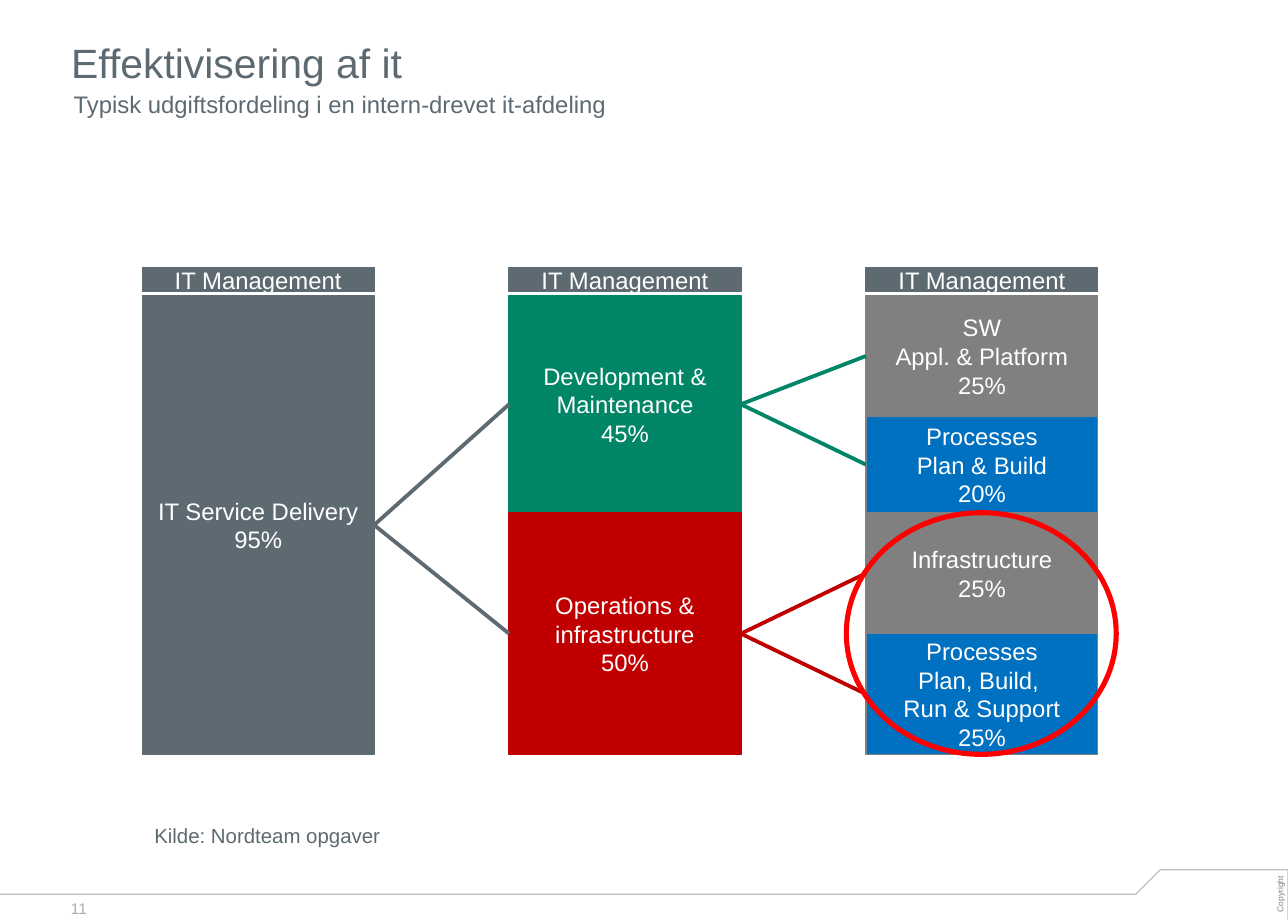
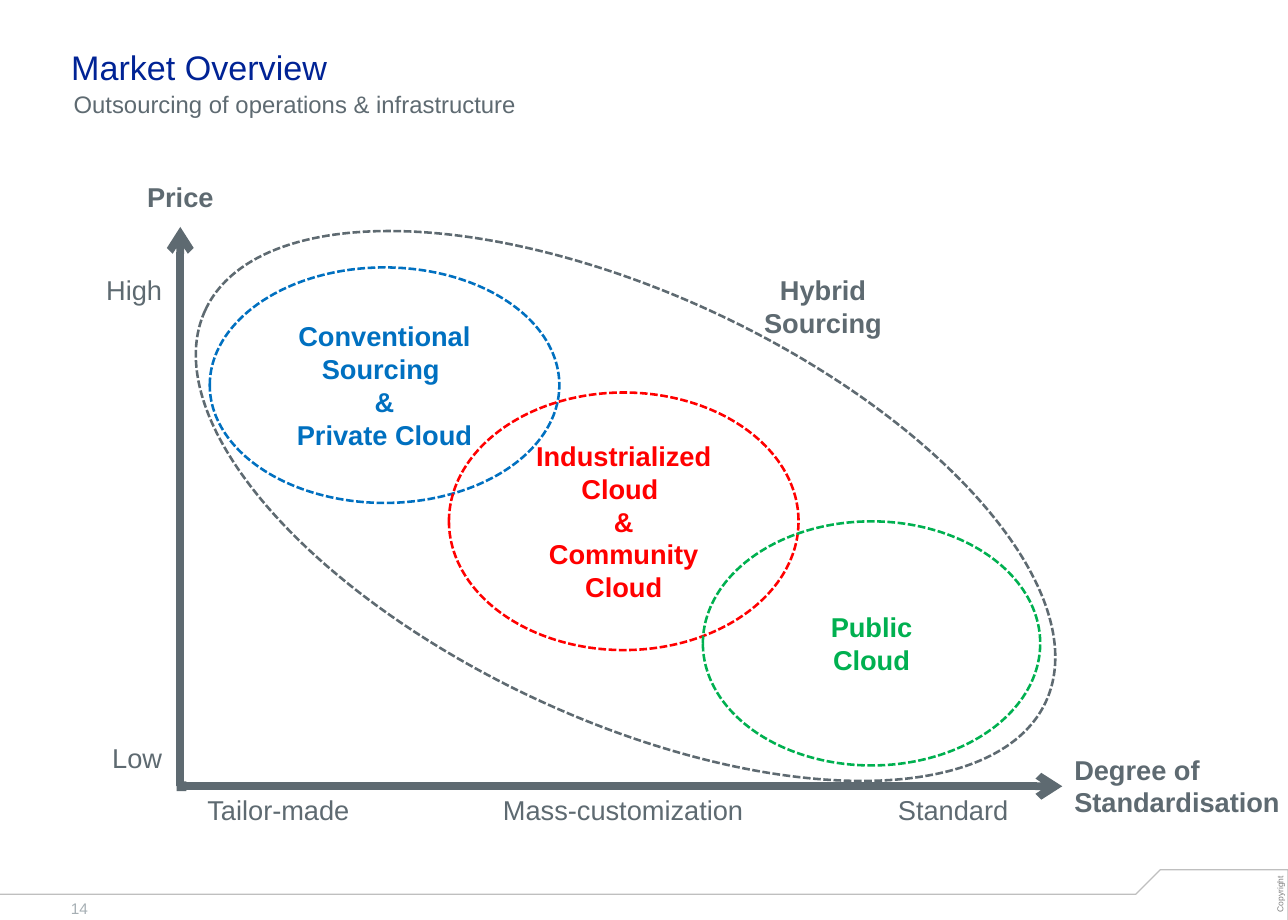
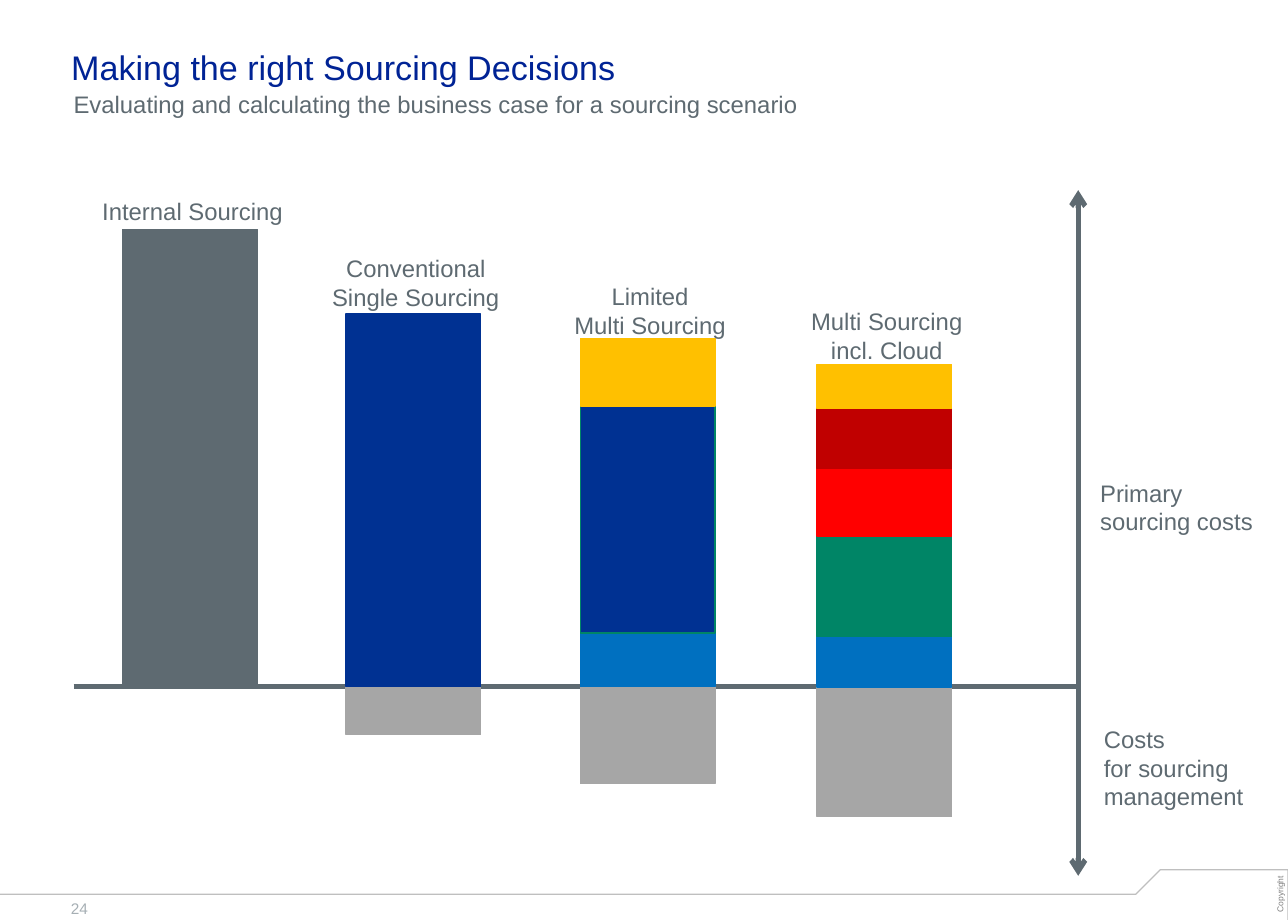
from lxml import etree
from pptx import Presentation
from pptx.dml.color import RGBColor
from pptx.enum.dml import MSO_LINE
from pptx.enum.shapes import MSO_CONNECTOR, MSO_SHAPE
from pptx.enum.text import MSO_ANCHOR, MSO_AUTO_SIZE, PP_ALIGN
from pptx.oxml.ns import qn
from pptx.util import Inches, Pt

RECT, OVAL = MSO_SHAPE.RECTANGLE, MSO_SHAPE.OVAL
STRAIGHT, DASH = MSO_CONNECTOR.STRAIGHT, MSO_LINE.SQUARE_DOT
LEFT, CENTER, RIGHT = PP_ALIGN.LEFT, PP_ALIGN.CENTER, PP_ALIGN.RIGHT
TOP, MIDDLE, BOTTOM = MSO_ANCHOR.TOP, MSO_ANCHOR.MIDDLE, MSO_ANCHOR.BOTTOM
NO_FIT = MSO_AUTO_SIZE.NONE
SITE_LEFT, SITE_RIGHT = 1, 3

FONT = "Arial"
COLORS = {
    "white": "FFFFFF", "slate": "5E6A71", "navy": "002395", "blue": "0070C0",
    "deep": "003192", "teal": "008566", "green": "00B050", "red": "FF0000",
    "wine": "C00000", "gold": "FFC000", "gray": "808080", "ash": "A6A6A6",
    "rule": "BFBFBF", "page": "A6AFB4",
}


def rgb(name):
    return RGBColor.from_string(COLORS[name])


def inches(*sizes):
    return [Inches(size) for size in sizes]


def write(frame, text, size, color="slate", bold=False, align=LEFT):
    """Put each line of the text in its own paragraph."""
    for i, line in enumerate(text.split("\n")):
        para = frame.add_paragraph() if i else frame.paragraphs[0]
        para.alignment = align
        para.space_before = Pt(0)
        run = para.add_run()
        run.text = line
        font = run.font
        font.name, font.size, font.bold = FONT, Pt(size), bold
        font.color.rgb = rgb(color)


def inset(frame, left=0, right=0):
    frame.margin_left, frame.margin_right = inches(left, right)
    frame.margin_top = frame.margin_bottom = 0


def label(slide, box, text, size, color="slate", bold=False, align=LEFT):
    shape = slide.shapes.add_textbox(*inches(*box))
    frame = shape.text_frame
    frame.word_wrap = True
    frame.vertical_anchor = TOP
    write(frame, text, size, color, bold, align)
    return shape


def paint(shape, fill=None, edge=None, width=0.75):
    shape.shadow.inherit = False
    if fill:
        shape.fill.solid()
        shape.fill.fore_color.rgb = rgb(fill)
    else:
        shape.fill.background()
    if edge:
        shape.line.color.rgb = rgb(edge)
        shape.line.width = Pt(width)
    else:
        shape.line.fill.background()


def block(slide, box, fill, text="", edge=None):
    shape = slide.shapes.add_shape(RECT, *inches(*box))
    paint(shape, fill, edge or fill)
    if text:
        write(shape.text_frame, text, 14, "white", align=CENTER)
    return shape


def ring(slide, box, edge, text="", fill=None, width=1.5, dash=DASH):
    shape = slide.shapes.add_shape(OVAL, *inches(*box))
    paint(shape, fill, edge, width)
    if dash:
        shape.line.dash_style = dash
    if text:
        write(shape.text_frame, text, 16, edge, True, CENTER)
    return shape


def line(slide, ends, color, width, arrow=False):
    shape = slide.shapes.add_connector(STRAIGHT, *inches(*ends))
    shape.line.color.rgb = rgb(color)
    shape.line.width = Pt(width)
    if arrow:
        etree.SubElement(shape.line._get_or_add_ln(), qn("a:tailEnd"), type="arrow")
    etree.SubElement(shape._element.spPr, qn("a:effectLst"))
    return shape


def link(slide, start, end, color):
    """Join the right side of one block to the left side of another."""
    shape = line(slide, (0, 0, 1, 1), color, 2.25)
    shape.begin_connect(start, SITE_RIGHT)
    shape.end_connect(end, SITE_LEFT)


def footer(slide, number):
    edge = [(9.26, 7.29), (9.46, 7.09), (10.5, 7.09), (10.5, 7.5)]
    form = slide.shapes.build_freeform(*inches(0, 7.29), scale=1.0)
    form.add_line_segments([inches(*point) for point in edge], close=False)
    paint(form.convert_to_shape(), edge="rule")
    side = label(slide, (10.23, 7.23, 0.41, 0.12), "Copyright", 5, "gray", align=CENTER)
    side.rotation = 270
    side.text_frame.vertical_anchor = MIDDLE
    inset(side.text_frame)
    label(slide, (0.48, 7.28, 0.39, 0.25), number, 9, "page")


def start(deck, number, title, lead, size=20, color="navy"):
    """Add a slide with its footer, title and lead line."""
    slide = deck.slides.add_slide(deck.slide_layouts[5])
    footer(slide, number)
    head = slide.shapes.title
    head.left, head.top, head.width, head.height = inches(0.48, 0.21, 9.77, 0.5)
    frame = head.text_frame
    frame.auto_size, frame.vertical_anchor = NO_FIT, BOTTOM
    inset(frame, 0.1)
    write(frame, title, size, color)
    sub = label(slide, (0.48, 0.73, 9.77, 0.42), lead, 14)
    inset(sub.text_frame, 0.12, 0.1)
    return slide


def stack(slide, box, parts):
    """Draw a management cap and blocks as high as their shares."""
    x, y, w, h = box
    block(slide, (x, y, w, 0.2), "slate", "IT Management")
    top, unit = y + 0.23, (h - 0.23) / 95
    blocks = []
    for share, fill, edge, text in parts:
        tall = share * unit
        blocks.append(block(slide, (x, top, w, tall), fill, f"{text}\n{share}%", edge))
        top += tall
    return blocks


def tree(slide, box):
    x, y, w, h = box
    wide = 1.89
    last = x + w - wide
    whole, = stack(slide, (x, y, wide, h), [(95, "slate", None, "IT Service Delivery")])
    halves = stack(slide, (x + 2.99, y, wide, h), [
        (45, "teal", None, "Development &\nMaintenance"),
        (50, "wine", None, "Operations &\ninfrastructure"),
    ])
    leaves = stack(slide, (last, y, wide, h), [
        (25, "gray", "gray", "SW\nAppl. & Platform"),
        (20, "blue", "gray", "Processes\nPlan & Build"),
        (25, "gray", "gray", "Infrastructure"),
        (25, "blue", "gray", "Processes\nPlan, Build, \nRun & Support"),
    ])
    for i, (half, color) in enumerate(zip(halves, ("teal", "wine"))):
        link(slide, whole, half, "slate")
        for leaf in leaves[2 * i:2 * i + 2]:
            link(slide, half, leaf, color)
    ring(slide, (last - 0.16, y + 2, 2.2, h - 2), "red", width=3, dash=None)


def market(slide, box):
    """Draw the price axes and the sourcing types between them."""
    x, y, w, h = box
    base = y + h
    hybrid = ring(slide, (x - 0.15, y + 0.54, 7.56, 3.47), "slate", fill="white")
    hybrid.rotation = 25
    line(slide, (x, base, x, y), "slate", 4.5, True)
    line(slide, (x - 0.03, base, x + w, base), "slate", 4.5, True)
    paint(slide.shapes.add_shape(RECT, *inches(x - 0.03, base - 0.04, 0.08, 0.08)), "slate")

    under = base + 0.01
    for spot, bold, align, text in [
        ((x - 0.1, under, 1.8, 0.37), False, CENTER, "Tailor-made"),
        ((x + 2.31, under, 2.6, 0.37), False, CENTER, "Mass-customization"),
        ((x + 5.5, under, 1.6, 0.37), False, CENTER, "Standard"),
        ((x - 1.05, y + 0.33, 1, 0.37), False, RIGHT, "High"),
        ((x - 1.05, base - 0.42, 1, 0.37), False, RIGHT, "Low"),
        ((x + w, base - 0.32, 1.84, 0.64), True, LEFT, "Degree of\nStandardisation"),
        ((x - 0.6, y - 0.43, 1.2, 0.37), True, CENTER, "Price"),
        ((x + 4.44, y + 0.33, 1.6, 0.7), True, CENTER, "Hybrid\nSourcing"),
    ]:
        note = label(slide, spot, text, 16, bold=bold, align=align)
        if align == LEFT:
            note.text_frame.margin_right = 0

    for spot, edge, fill, text in [
        ((x + 0.24, y + 0.33, 2.85, 1.92), "blue", "white",
         "Conventional\nSourcing \n&\nPrivate Cloud"),
        ((x + 2.19, y + 1.35, 2.85, 2.1), "red", None,
         "Industrialized\nCloud \n&\nCommunity\nCloud"),
        ((x + 4.26, y + 2.4, 2.75, 1.99), "green", None, "Public\nCloud"),
    ]:
        ring(slide, spot, edge, text, fill)


def bar(slide, x, base, cost, parts, gap, text):
    """Stack parts upward from the base, with the cost below it."""
    wide, room, top = 1.1, 1.9, base
    if cost:
        block(slide, (x, base, wide, cost), "ash")
    for tall, fill, edge in parts:
        top -= tall
        block(slide, (x, top, wide, tall), fill, edge=edge)
    left = x + 0.57 - room / 2
    label(slide, (left, top - gap, room, gap), text, 14, align=CENTER)


def costs(slide, box):
    x, y, w, h = box
    base, right = y + 4.05, x + w
    line(slide, (x, base, right, base), "slate", 3)
    for shift, cost, gap, text, parts in [
        (0.4, 0, 0.32, "Internal Sourcing", [(3.73, "slate", None)]),
        (2.22, 0.39, 0.54, "Conventional\nSingle Sourcing", [(3.04, "deep", None)]),
        (4.13, 0.79, 0.51, "Limited\nMulti Sourcing",
         [(0.44, "blue", None), (1.85, "deep", "teal"), (0.55, "gold", None)]),
        (6.06, 1.06, 0.52, "Multi Sourcing\nincl. Cloud",
         [(0.41, "blue", None), (0.82, "teal", None), (0.55, "red", None),
          (0.49, "wine", None), (0.36, "gold", None)]),
    ]:
        bar(slide, x + shift, base, cost, parts, gap, text)
    for end in (y, y + h):
        line(slide, (right, base, right, end), "slate", 3, True)
    label(slide, (right + 0.08, y + 2.3, 1.6, 0.53), "Primary\nsourcing costs", 14)
    label(slide, (right + 0.11, y + 4.31, 1.55, 0.74),
          "Costs\nfor sourcing\nmanagement", 14)


def main():
    deck = Presentation()
    deck.slide_width, deck.slide_height = inches(10.5, 7.5)

    slide = start(deck, "11", "Effektivisering af it",
                  "Typisk udgiftsfordeling i en intern-drevet it-afdeling", 24, "slate")
    tree(slide, (1.16, 2.18, 7.79, 3.97))
    label(slide, (1.16, 6.66, 2.6, 0.32), "Kilde: Nordteam opgaver", 12)

    slide = start(deck, "14", "Market Overview",
                  "Outsourcing of operations & infrastructure")
    market(slide, (1.47, 1.85, 7.19, 4.56))

    slide = start(deck, "24", "Making the right Sourcing Decisions",
                  "Evaluating and calculating the business case for a sourcing scenario")
    costs(slide, (0.6, 1.55, 8.19, 5.59))

    deck.save("out.pptx")


if __name__ == "__main__":
    main()
